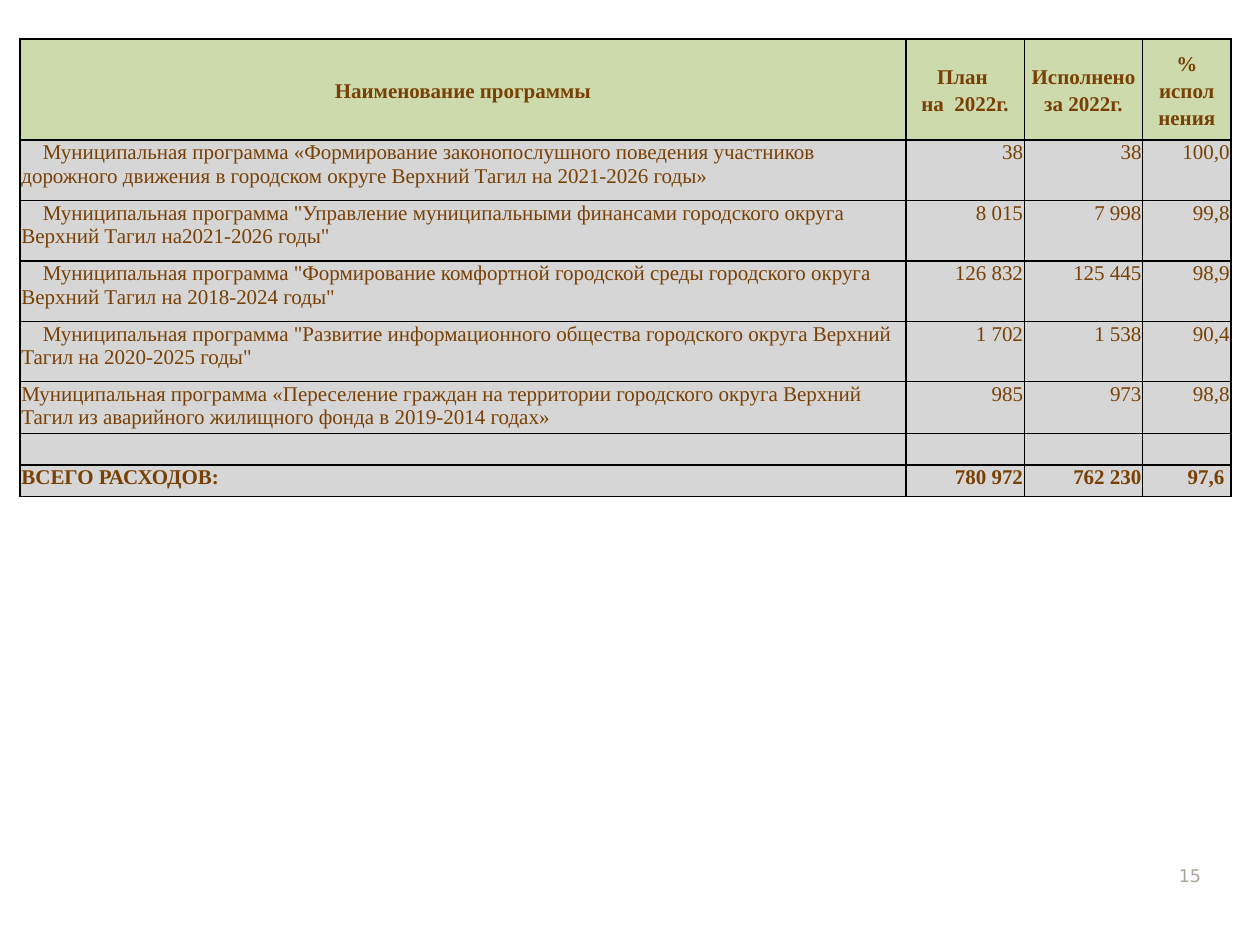
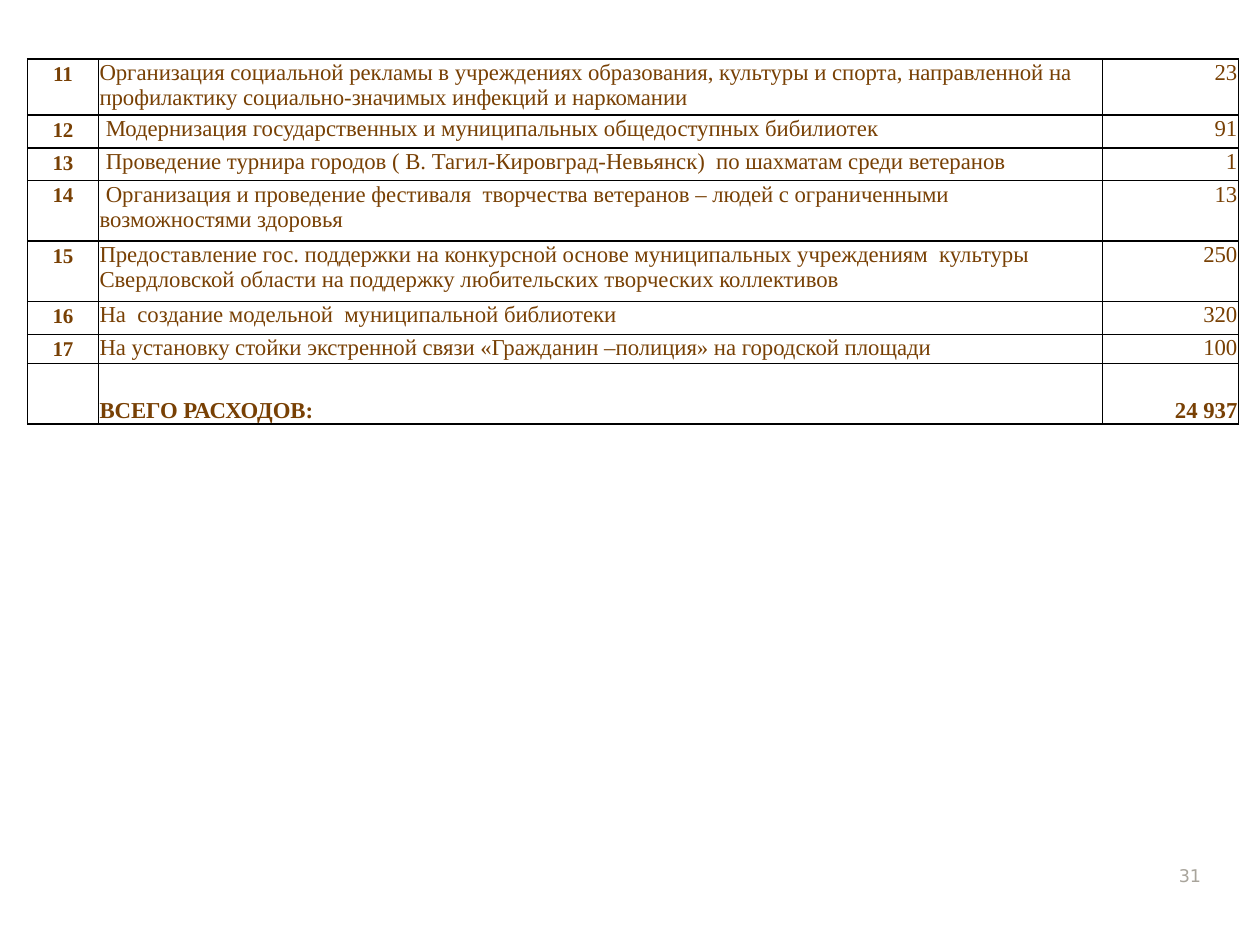
"""Builds two slides of budget tables: municipal programmes and other expenses."""
from lxml.etree import SubElement
from pptx import Presentation
from pptx.dml.color import RGBColor
from pptx.enum.text import MSO_ANCHOR as Anchor, PP_ALIGN as Align
from pptx.oxml.ns import qn
from pptx.util import Inches, Pt

SLIDE_WIDTH, SLIDE_HEIGHT = Inches(10), Inches(7.5)
GRID_COLUMNS, GRID_ROWS = 100, 75
COLORS = {"text": "784004", "header": "CCDAAC", "body": "D6D6D6",
          "border": "000000", "number": "A8A49B"}
TABLE_FONT, NUMBER_FONT = "Times New Roman", "DejaVu Sans"
WIDE = {"margin_left": Inches(0.04), "margin_right": Inches(0.04),
        "margin_top": 0, "margin_bottom": 0}
TIGHT = {"margin_left": Inches(0.01), "margin_right": Inches(0.01),
         "margin_top": Inches(0.01), "margin_bottom": 0}
CENTERED = {"alignment": Align.CENTER, "line_spacing": 1.15}
LEFT, RIGHT = {"alignment": Align.LEFT}, {"alignment": Align.RIGHT}

PROGRAM_HEADER = ["Наименование программы", "План \nна  2022г.",
                  "Исполнено \nза 2022г.", "% испол нения"]
PROGRAMS = [
    ["Муниципальная программа «Формирование законопослушного поведения участников "
     "дорожного движения в городском округе Верхний Тагил на 2021-2026 годы»",
     "38", "38", "100,0"],
    ["Муниципальная программа \"Управление муниципальными финансами городского округа "
     "Верхний Тагил на2021-2026 годы\"", "8 015", "7 998", "99,8"],
    ["Муниципальная программа \"Формирование комфортной городской среды городского округа "
     "Верхний Тагил на 2018-2024 годы\"", "126 832", "125 445", "98,9"],
    ["Муниципальная программа \"Развитие информационного общества городского округа Верхний "
     "Тагил на 2020-2025 годы\"", "1 702", "1 538", "90,4"],
    ["Муниципальная программа «Переселение граждан на территории городского округа Верхний "
     "Тагил из аварийного жилищного фонда в 2019-2014 годах»", "985", "973", "98,8"],
    ["", "", "", ""],
]
PROGRAM_TOTAL = ["ВСЕГО РАСХОДОВ:", "780 972", "762 230", "97,6 "]
INDENTED_PROGRAMS = 4

EXPENSES = [
    ["11", "Организация социальной рекламы в учреждениях образования, культуры и спорта, "
     "направленной на профилактику социально-значимых инфекций и наркомании", "23"],
    ["12", "Модернизация государственных и муниципальных общедоступных бибилиотек", "91"],
    ["13", "Проведение турнира городов ( В. Тагил-Кировград-Невьянск)  по шахматам "
     "среди ветеранов", "1"],
    ["14", "Организация и проведение фестиваля  творчества ветеранов – людей с "
     "ограниченными возможностями здоровья", "13"],
    ["15", "Предоставление гос. поддержки на конкурсной основе муниципальных учреждениям  "
     "культуры  Свердловской области на поддержку любительских творческих коллективов",
     "250"],
    ["16", "На  создание модельной  муниципальной библиотеки", "320"],
    ["17", "На установку стойки экстренной связи «Гражданин –полиция» на городской площади",
     "100"],
]
EXPENSE_TOTAL = ["", "ВСЕГО РАСХОДОВ:", "24 937"]
INDENTED_EXPENSES = {"12", "13", "14"}


def across(columns):
    """Return the length of a number of grid columns."""
    return round(SLIDE_WIDTH * columns / GRID_COLUMNS)


def down(rows):
    """Return the length of a number of grid rows."""
    return round(SLIDE_HEIGHT * rows / GRID_ROWS)


def apply_format(target, values):
    """Set each attribute named in a dict of format values."""
    for name, value in values.items():
        setattr(target, name, value)


def write_span(para, text, font, size, color, bold=False):
    """Add one formatted run to a paragraph."""
    span = para.add_run()
    span.text = text
    apply_format(span.font, {"name": font, "size": Pt(size), "bold": bold})
    span.font.color.rgb = RGBColor.from_string(COLORS[color])


def draw_borders(cell):
    """Outline a cell with thin lines on all four sides."""
    properties = cell._tc.get_or_add_tcPr()
    for side in ("lnL", "lnR", "lnT", "lnB"):
        line = SubElement(properties, qn(f"a:{side}"), w=str(Pt(1)))
        fill = SubElement(line, qn("a:solidFill"))
        SubElement(fill, qn("a:srgbClr"), val=COLORS["border"])


def fill_cell(cell, text, layout=LEFT, margins=TIGHT, anchor=Anchor.TOP,
              size=12, bold=False, fill=None, indent=0):
    """Write and format one table cell."""
    apply_format(cell, {**margins, "vertical_anchor": anchor})
    draw_borders(cell)
    if fill:
        cell.fill.solid()
        cell.fill.fore_color.rgb = RGBColor.from_string(COLORS[fill])
    else:
        cell.fill.background()
    frame = cell.text_frame
    for position, line in enumerate(text.split("\n")):
        para = frame.add_paragraph() if position else frame.paragraphs[0]
        apply_format(para, layout)
        if indent:
            para._p.get_or_add_pPr().set("indent", str(across(indent)))
        if line:
            write_span(para, line, TABLE_FONT, size, "text", bold)
        else:
            SubElement(para._p, qn("a:endParaRPr"), sz=str(size * 100))


def add_grid(page, left, top, widths, heights):
    """Add an unstyled table with the given column widths and row heights."""
    table = page.shapes.add_table(len(heights), len(widths), across(left), down(top),
                                  across(sum(widths)), down(sum(heights))).table
    apply_format(table, {"first_row": False, "horz_banding": False})
    for column, width in zip(table.columns, widths):
        column.width = across(width)
    for row, height in zip(table.rows, heights):
        row.height = down(height)
    return table


def add_page(deck, number):
    """Add a blank slide with its page number."""
    page = deck.slides.add_slide(deck.slide_layouts[6])
    box = page.shapes.add_textbox(across(91.3), down(66.8), across(5), down(4))
    apply_format(box.text_frame, {"word_wrap": True, "vertical_anchor": Anchor.BOTTOM})
    para = box.text_frame.paragraphs[0]
    apply_format(para, RIGHT)
    write_span(para, number, NUMBER_FONT, 10, "number")
    return page


def add_programs(page):
    """Add the table of planned and actual programme spending."""
    heights = [8] + [4.8] * INDENTED_PROGRAMS + [2.5] * 3
    table = add_grid(page, 1.6, 3.1, [70.3, 9.4, 9.4, 7], heights)
    for column, title in enumerate(PROGRAM_HEADER):
        fill_cell(table.cell(0, column), title, CENTERED, WIDE, Anchor.MIDDLE,
                  bold=True, fill="header")
    for row, values in enumerate(PROGRAMS + [PROGRAM_TOTAL], start=1):
        for column, value in enumerate(values):
            indent = 1.7 if column == 0 and row <= INDENTED_PROGRAMS else 0
            fill_cell(table.cell(row, column), value, RIGHT if column else LEFT,
                      bold=values is PROGRAM_TOTAL, fill="body", indent=indent)


def add_expenses(page):
    """Add the numbered table of expenses with its total."""
    heights = [3, 2.6, 2.6, 4.8, 4.8, 2.6, 2.3, 4.8]
    table = add_grid(page, 2.2, 4.7, [5.6, 79.7, 10.8], heights)
    for row, values in enumerate(EXPENSES + [EXPENSE_TOTAL]):
        number, name, amount = values
        total = values is EXPENSE_TOTAL
        style = {"size": 13, "bold": total, "anchor": Anchor.BOTTOM if total else Anchor.TOP}
        fill_cell(table.cell(row, 0), number, CENTERED, WIDE, bold=True)
        fill_cell(table.cell(row, 1), name, LEFT,
                  indent=0.5 if number in INDENTED_EXPENSES else 0, **style)
        fill_cell(table.cell(row, 2), amount, RIGHT, **style)


def main():
    """Build and save the deck."""
    deck = Presentation()
    apply_format(deck, {"slide_width": SLIDE_WIDTH, "slide_height": SLIDE_HEIGHT})
    add_programs(add_page(deck, "15"))
    add_expenses(add_page(deck, "31"))
    deck.save("out.pptx")


if __name__ == "__main__":
    main()
